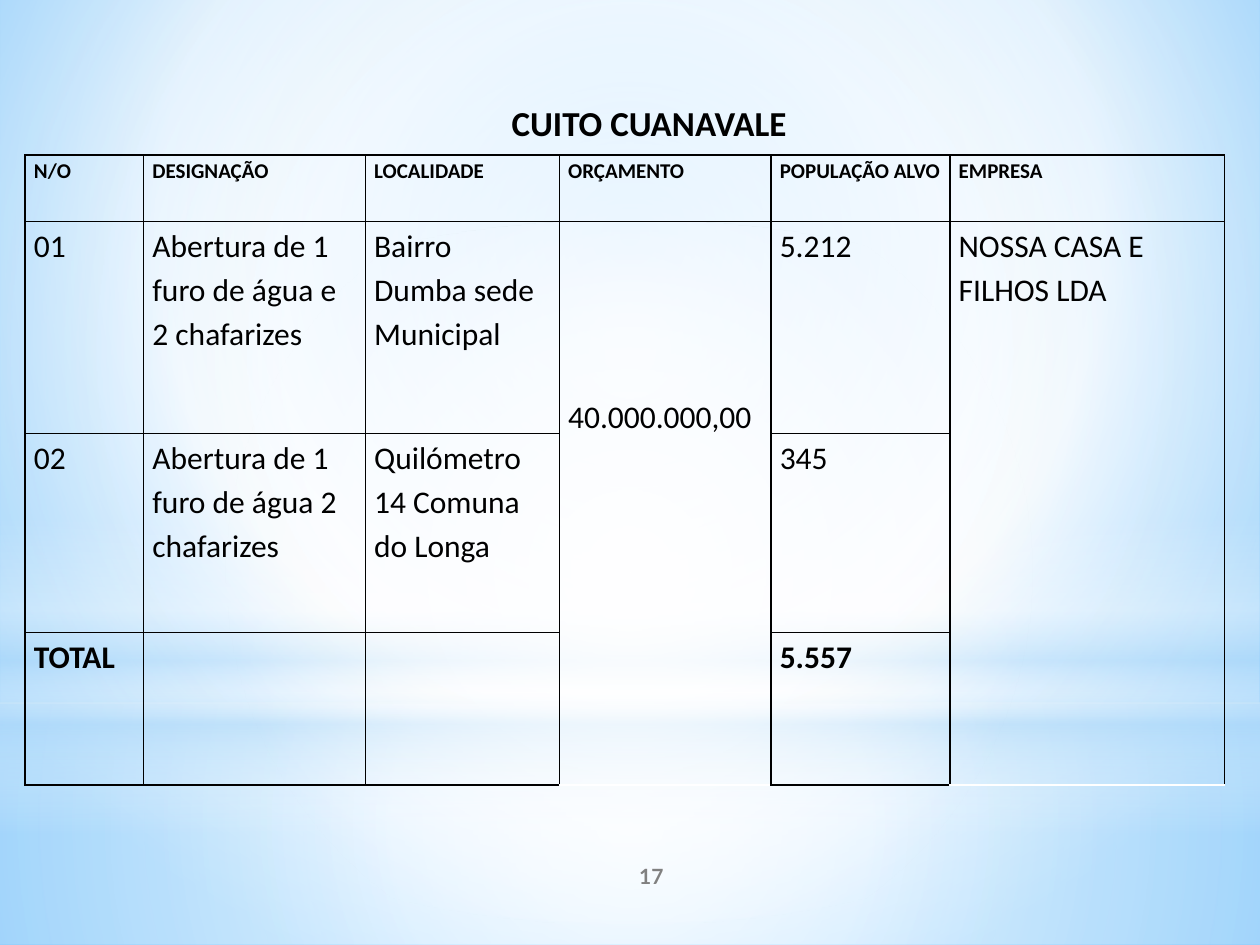
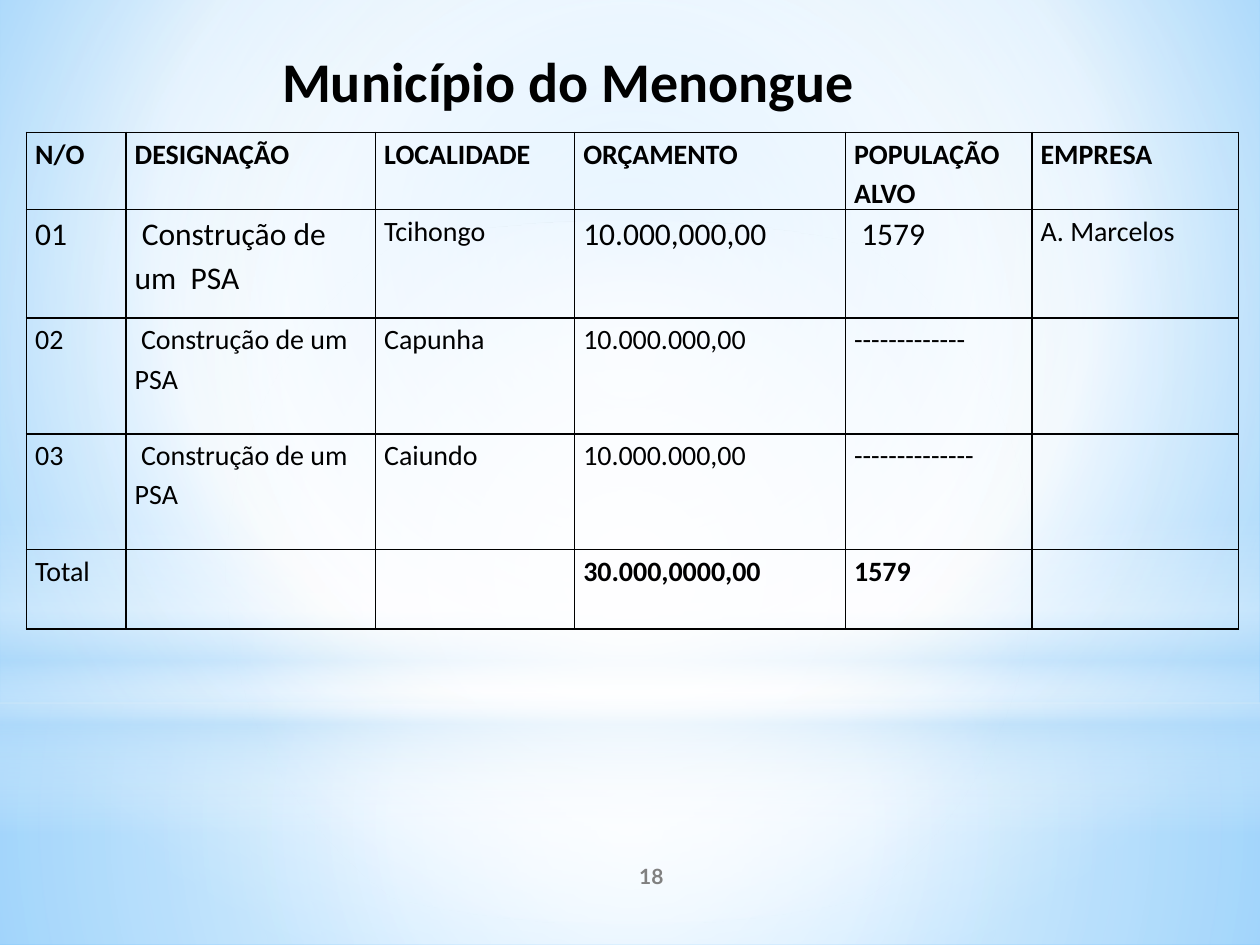
"""Builds two slides listing municipal water projects."""
import pptx
import pptx.dml.color
import pptx.enum.shapes
import pptx.enum.text
import pptx.oxml
import pptx.oxml.ns
import pptx.util

Inches = pptx.util.Inches
Pt = pptx.util.Pt
Anchor = pptx.enum.text.MSO_ANCHOR
Align = pptx.enum.text.PP_ALIGN
Preset = pptx.enum.shapes.MSO_SHAPE

BLACK, GREY, WHITE, PALE = "000000", "808080", "FFFFFF", "B4DCFA"
TEXT_FONT, NUMBER_FONT = "Calibri", "Lato"
CENTRE = (50, 50, 50, 50)

BACKGROUND = [(0, "9ED5FF", 100), (60, WHITE, 100), (100, "5BB9FF", 100)]
GLOWS = [
    (Preset.RECTANGLE, (0, 5.58, 10, 1.92),
     [(0, WHITE, 91), (37, WHITE, 76), (100, PALE, 79)], CENTRE),
    (Preset.RECTANGLE, (0, 0, 10, 5.58),
     [(0, WHITE, 89), (48, WHITE, 62), (100, PALE, 79)], CENTRE),
    (Preset.RECTANGLE, (0, 4.12, 10, 2.5),
     [(0, WHITE, 0), (29, WHITE, 30), (45, PALE, 40), (55, WHITE, 26),
      (65, PALE, 60), (100, WHITE, 0)], None),
    (Preset.OVAL, (0, 1.75, 10, 5.58),
     [(0, WHITE, 100), (56, WHITE, 0)], CENTRE),
]

HEADINGS = ["N/O", "DESIGNAÇÃO", "LOCALIDADE", "ORÇAMENTO", "POPULAÇÃO ALVO", "EMPRESA"]
CUITO_ROWS = [
    HEADINGS,
    ["01", "Abertura de 1 furo de água e 2 chafarizes", "Bairro Dumba sede Municipal",
     "40.000.000,00", "5.212", "NOSSA CASA E FILHOS LDA"],
    ["02", "Abertura de 1 furo de água 2 chafarizes", "Quilómetro 14 Comuna do Longa",
     "", "345", ""],
    ["TOTAL", "", "", "", "5.557", ""],
]
WORKS = " Construção de um  PSA"
MENONGUE_ROWS = [
    HEADINGS,
    ["01", WORKS, "Tcihongo", "10.000,000,00", " 1579", "A. Marcelos"],
    ["02", WORKS, "Capunha", "10.000.000,00", "-------------", ""],
    ["03", WORKS, "Caiundo", "10.000.000,00", "--------------", ""],
    ["Total", "", "", "30.000,0000,00", "1579", ""],
]


def colour(value):
    """Turn a hex string into a colour."""
    return pptx.dml.color.RGBColor.from_string(value)


def make_xml(tag, attributes, body):
    """Parse one drawing element."""
    namespace = pptx.oxml.ns.nsdecls("a")
    return pptx.oxml.parse_xml(f"<a:{tag} {namespace} {attributes}>{body}</a:{tag}>")


def set_gradient(element, stops, focus):
    """Swap the solid fill in an element for a circular or vertical gradient."""
    marks = "".join(
        f'<a:gs pos="{place * 1000}"><a:srgbClr val="{shade}">'
        f'<a:alpha val="{opacity * 1000}"/></a:srgbClr></a:gs>'
        for place, shade, opacity in stops)
    if focus:
        left, top, right, bottom = (side * 1000 for side in focus)
        course = (f'<a:path path="circle"><a:fillToRect l="{left}" t="{top}" '
                  f'r="{right}" b="{bottom}"/></a:path>')
    else:
        course = '<a:lin ang="5400000" scaled="0"/>'
    gradient = make_xml("gradFill", 'rotWithShape="1"', f"<a:gsLst>{marks}</a:gsLst>{course}")
    solid = element.find(".//" + pptx.oxml.ns.qn("a:solidFill"))
    solid.getparent().replace(solid, gradient)


def add_span(para, text, size, bold=False, shade=BLACK, font=TEXT_FONT):
    """Add one formatted run."""
    span = para.add_run()
    span.text = text
    span.font.size, span.font.bold, span.font.name = Pt(size), bold, font
    span.font.color.rgb = colour(shade)


def add_label(page, place, text, size, align, anchor, left=0.1, right=0.1, **style):
    """Add a bold one-line text box."""
    frame = page.shapes.add_textbox(*map(Inches, place)).text_frame
    frame.word_wrap = True
    frame.vertical_anchor = anchor
    frame.margin_left, frame.margin_right = Inches(left), Inches(right)
    frame.paragraphs[0].alignment = align
    add_span(frame.paragraphs[0], text, size, True, **style)


def add_page(deck, number):
    """Add a blank page with the shared backdrop and its number."""
    page = deck.slides.add_slide(deck.slide_layouts[6])
    page.background.fill.solid()
    set_gradient(page.element, BACKGROUND, (20, 10, 20, 60))
    for preset, place, stops, focus in GLOWS:
        glow = page.shapes.add_shape(preset, *map(Inches, place))
        glow.shadow.inherit = False
        glow.line.fill.background()
        glow.fill.solid()
        set_gradient(glow.element, stops, focus)
    add_label(page, (4.17, 6.75, 2, 0.4), str(number), 12, Align.CENTER, Anchor.MIDDLE,
              shade=GREY, font=NUMBER_FONT)
    return page


def set_borders(cell, sides):
    """Draw thin black lines on the given sides of a cell."""
    properties = cell._tc.get_or_add_tcPr()
    for index, side in enumerate(sides):
        line = make_xml("ln" + side, 'w="12700"',
                        f'<a:solidFill><a:srgbClr val="{BLACK}"/></a:solidFill>')
        properties.insert(index, line)


def border_sides(cell, is_last):
    """Leave out the lines that would cross a merged cell."""
    merged = cell.is_merge_origin or cell.is_spanned
    top = "" if cell.is_spanned else "T"
    bottom = "" if merged and not is_last else "B"
    return "LR" + top + bottom


def add_grid(page, corner, widths, heights, rows, head_size, body_size,
             large=(), bold=(), merged=()):
    """Add a project table; large and bold hold (row, column) pairs."""
    size = (sum(widths), sum(heights))
    table = page.shapes.add_table(len(rows), len(widths), *map(Inches, corner + size)).table
    table.first_row = table.horz_banding = False
    for column, width in zip(table.columns, widths):
        column.width = Inches(width)
    for row, height in zip(table.rows, heights):
        row.height = Inches(height)
    last = len(rows) - 1
    for column in merged:
        table.cell(1, column).merge(table.cell(last, column))
    for r, texts in enumerate(rows):
        for c, text in enumerate(texts):
            cell = table.cell(r, c)
            cell.fill.background()
            cell.margin_left = cell.margin_right = Inches(0.07)
            cell.margin_top = cell.margin_bottom = 0
            set_borders(cell, border_sides(cell, r == last))
            if text:
                para = cell.text_frame.paragraphs[0]
                para.line_spacing = 1.15
                points = head_size if r == 0 else 18 if (r, c) in large else body_size
                add_span(para, text, points, r == 0 or (r, c) in bold)
    return table


def add_cuito(deck):
    """Build the Cuito Cuanavale page."""
    page = add_page(deck, 17)
    table = add_grid(page, (0.2, 1.23), [0.94, 1.76, 1.54, 1.68, 1.42, 2.18],
                     [0.53, 1.68, 1.58, 1.21], CUITO_ROWS, 12, 18,
                     bold={(3, 0), (3, 4)}, merged=(3, 5))
    table.cell(1, 3).margin_top = Inches(1.36)
    add_label(page, (1.54, 0.76, 5.57, 0.71), "CUITO CUANAVALE", 20,
              Align.LEFT, Anchor.TOP, left=2.52)


def add_menongue(deck):
    """Build the Menongue page."""
    page = add_page(deck, 18)
    add_label(page, (0.28, 0.25, 8.83, 0.77), "Município do Menongue", 32,
              Align.CENTER, Anchor.MIDDLE, right=0.47)
    add_grid(page, (0.21, 1.05), [0.79, 1.98, 1.58, 2.15, 1.48, 1.64],
             [0.61, 0.86, 0.92, 0.92, 0.63], MENONGUE_ROWS, 16, 16,
             large={(1, 0), (1, 1), (1, 3), (1, 4)}, bold={(4, 3), (4, 4)})


def main():
    """Build and save the deck."""
    deck = pptx.Presentation()
    deck.slide_width, deck.slide_height = Inches(10), Inches(7.5)
    add_cuito(deck)
    add_menongue(deck)
    deck.save("out.pptx")


if __name__ == "__main__":
    main()
